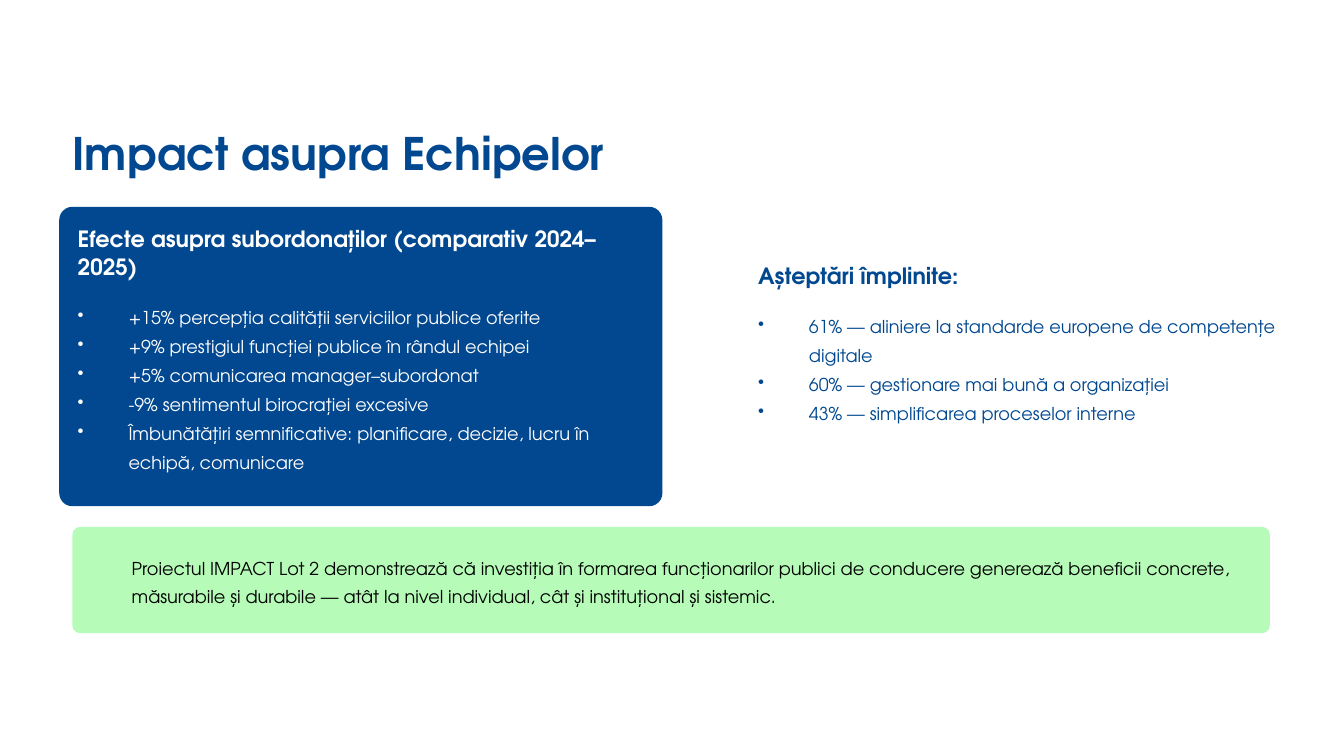
from lxml import etree
from pptx import Presentation
from pptx import util as u
from pptx.dml.color import RGBColor
from pptx.enum import shapes
from pptx.oxml.ns import qn

FONT = "TeX Gyre Adventor"
HUES = {"blue": "014890", "card": "024890", "mint": "B6FCB8",
        "white": "FFFFFF", "black": "000000"}

deck = Presentation()
deck.slide_width, deck.slide_height = u.Cm(25.4), u.Cm(14.29)
slide = deck.slides.add_slide(deck.slide_layouts[6])


def write(lines, at, hue="blue", size=9.5, lead=15.5, bold=False,
          dots=False, wrap=True):
    box = slide.shapes.add_textbox(*map(u.Cm, at))
    frame = box.text_frame
    frame.word_wrap = wrap
    frame.margin_left = frame.margin_right = 0
    frame.margin_top = frame.margin_bottom = 0
    for i, line in enumerate(lines):
        para = frame.paragraphs[0] if i == 0 else frame.add_paragraph()
        para.line_spacing = u.Pt(lead)
        if dots:
            props = para._p.get_or_add_pPr()
            props.set("marL", str(u.Cm(0.96)))
            props.set("indent", str(u.Cm(-0.96)))
            etree.SubElement(props, qn("a:buChar")).set("char", "•")
        run = para.add_run()
        run.text = line
        run.font.name = FONT
        run.font.size = u.Pt(size)
        run.font.bold = bold
        run.font.color.rgb = RGBColor.from_string(HUES[hue])


# Panels: blue card and green banner
for at, hue, curve in (
    ((1.12, 3.91, 11.4, 5.66), "card", 0.044),
    ((1.37, 9.96, 22.63, 2.01), "mint", 0.072),
):
    panel = slide.shapes.add_shape(
        shapes.MSO_SHAPE.ROUNDED_RECTANGLE, *map(u.Cm, at))
    panel.adjustments[0] = curve
    panel.shadow.inherit = False
    panel.fill.solid()
    panel.fill.fore_color.rgb = RGBColor.from_string(HUES[hue])
    panel.line.fill.background()

# Title
write(["Impact asupra Echipelor"], (1.37, 2.31, 14.33, 1.07),
      size=24, lead=30.5, bold=True, wrap=False)

# Effects on the teams
write(["Efecte asupra subordonaților (comparativ 2024–2025)"],
      (1.47, 4.24, 10.72, 1.07), hue="white", size=12, lead=15, bold=True)
write([
    "+15% percepția calității serviciilor publice oferite",
    "+9% prestigiul funcției publice în rândul echipei",
    "+5% comunicarea manager–subordonat",
    "-9% sentimentul birocrației excesive",
    "Îmbunătățiri semnificative: planificare, decizie, lucru în echipă, "
    "comunicare",
], (1.47, 5.66, 10.72, 3.78), hue="white", dots=True)

# Expectations met
write(["Așteptări împlinite:"], (14.33, 4.93, 6.45, 0.53),
      size=12, lead=15, bold=True, wrap=False)
write([
    "61% — aliniere la standarde europene de competențe digitale",
    "60% — gestionare mai bună a organizației",
    "43% — simplificarea proceselor interne",
], (14.33, 5.82, 10.9, 3.23), dots=True)

# Conclusion
write(["Proiectul IMPACT Lot 2 demonstrează că investiția în formarea "
       "funcționarilor publici de conducere generează beneficii concrete, "
       "măsurabile și durabile — atât la nivel individual, cât și "
       "instituțional și sistemic."],
      (2.49, 10.39, 21.18, 1.09), hue="black")

deck.save("out.pptx")
